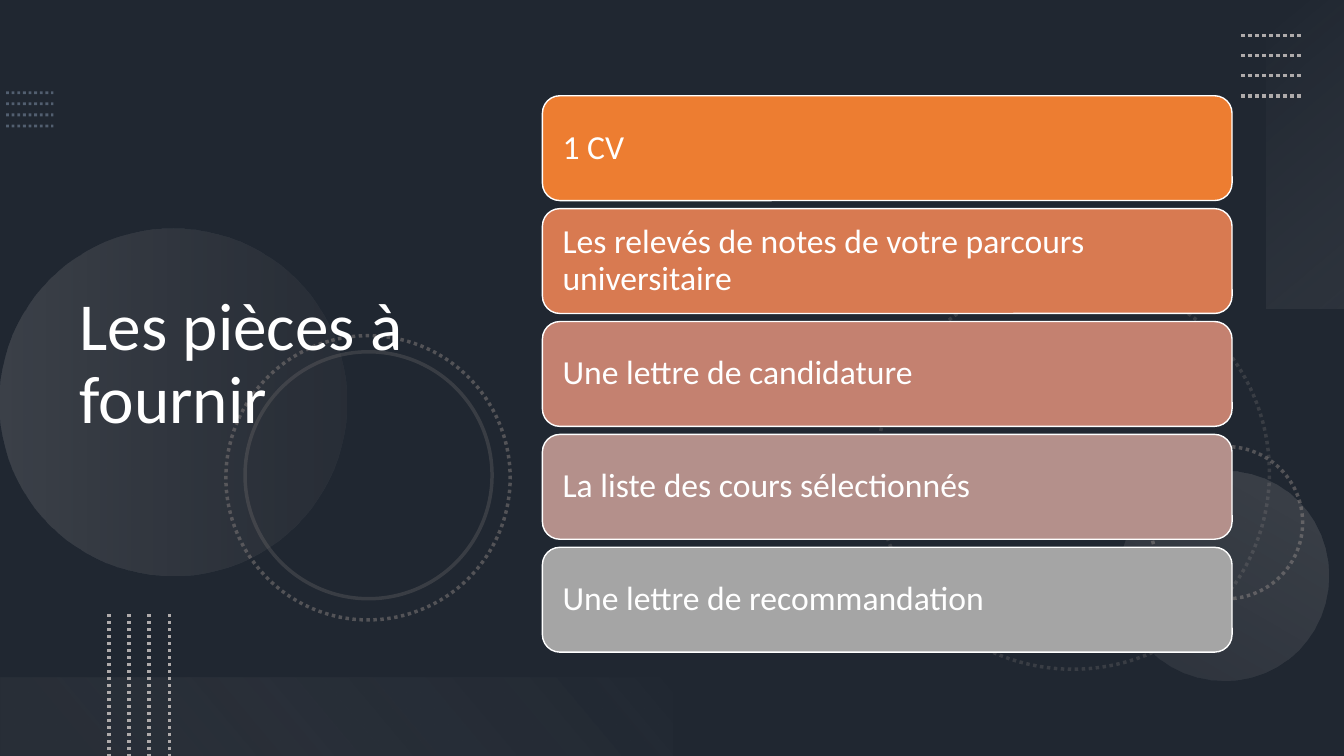
from lxml import etree
from pptx import Presentation
from pptx.dml.color import RGBColor
from pptx.enum.dml import MSO_LINE
from pptx.enum.shapes import MSO_CONNECTOR, MSO_SHAPE
from pptx.enum.text import MSO_ANCHOR, PP_ALIGN
from pptx.oxml.ns import qn
from pptx.util import Inches, Pt

RECTANGLE = MSO_SHAPE.RECTANGLE
ROUNDED = MSO_SHAPE.ROUNDED_RECTANGLE
OVAL = MSO_SHAPE.OVAL
STRAIGHT = MSO_CONNECTOR.STRAIGHT
DOTTED = MSO_LINE.ROUND_DOT
MIDDLE = MSO_ANCHOR.MIDDLE
LEFT = PP_ALIGN.LEFT

COLORS = {
    "background": "44546A",
    "overlay": "000000",
    "white": "FFFFFF",
    "blue": "8497B0",
    "gray": "767171",
    "silver": "AFABAB",
    "pale": "F5F5F5",
}
CARDS = [
    ("1 CV", "ED7D31"),
    ("Les relevés de notes de votre parcours universitaire", "D87A51"),
    ("Une lettre de candidature", "C48170"),
    ("La liste des cours sélectionnés", "B4908B"),
    ("Une lettre de recommandation", "A5A5A5"),
]


def rgb(name):
    return RGBColor.from_string(COLORS.get(name, name))


def set_opacity(element, *percents):
    for color, percent in zip(element.iter(qn("a:srgbClr")), percents):
        etree.SubElement(color, qn("a:alpha")).set("val", str(percent * 1000))


def set_line(line, color, width, dash=None):
    line.color.rgb = rgb(color)
    line.width = Pt(width)
    if dash:
        line.dash_style = dash


def add_shape(slide, kind, box, rotation=0):
    shape = slide.shapes.add_shape(kind, *map(Inches, box))
    shape.rotation = rotation
    shape.shadow.inherit = False
    shape.fill.background()
    shape.line.fill.background()
    return shape


def write_text(shape, text, *, size, color="white", font="Calibri", margin=0.1):
    frame = shape.text_frame
    frame.word_wrap = True
    frame.vertical_anchor = MIDDLE
    frame.margin_left = frame.margin_right = Inches(margin)
    paragraph = frame.paragraphs[0]
    paragraph.alignment = LEFT
    paragraph.line_spacing = 0.9
    run = paragraph.add_run()
    run.text = text
    run.font.size = Pt(size)
    run.font.name = font
    run.font.color.rgb = rgb(color)


def add_backdrop(slide, box):
    slide.background.fill.solid()
    slide.background.fill.fore_color.rgb = rgb("background")
    overlay = add_shape(slide, RECTANGLE, box)
    overlay.fill.solid()
    overlay.fill.fore_color.rgb = rgb("overlay")
    set_opacity(overlay._element.spPr, 53)


def add_dotted_lines(slide, box, color, width, vertical=False, opacity=100, count=4):
    left, top, box_width, box_height = box
    for index in range(count):
        share = index / (count - 1)
        if vertical:
            x = left + share * box_width
            ends = (x, top, x, top + box_height)
        else:
            y = top + share * box_height
            ends = (left, y, left + box_width, y)
        line = slide.shapes.add_connector(STRAIGHT, *map(Inches, ends))
        set_line(line.line, color, width, DOTTED)
        properties = line._element.spPr
        etree.SubElement(properties, qn("a:effectLst"))
        set_opacity(properties, opacity)


def add_ring(slide, box, opacity, rotation=75, dash=DOTTED):
    ring = add_shape(slide, OVAL, box, rotation)
    set_line(ring.line, "gray", 2.5, dash)
    set_opacity(ring._element.spPr, opacity)


def add_gradient(slide, kind, box, rotation, angle, stops):
    shape = add_shape(slide, kind, box, rotation)
    shape.fill.gradient()
    shape.fill.gradient_angle = 360 - angle
    for stop, (position, color, _) in zip(shape.fill.gradient_stops, stops):
        stop.position = position
        stop.color.rgb = rgb(color)
    set_opacity(shape._element.spPr, *(opacity for _, _, opacity in stops))


def add_circles(slide):
    add_ring(slide, (8.69, 2.74, 3.9, 3.9), 30)
    add_ring(slide, (11.41, 4.43, 1.51, 1.51), 60, rotation=270)
    add_gradient(slide, OVAL, (0, 2.27, 3.44, 3.44), 270, 90,
                 [(0, "silver", 20), (1, "gray", 10)])
    add_gradient(slide, OVAL, (11.1, 4.67, 2.08, 2.08), 210, 90,
                 [(0, "silver", 10), (1, "silver", 20)])
    add_ring(slide, (2.24, 3.33, 2.82, 2.82), 60)
    add_ring(slide, (2.43, 3.49, 2.45, 2.45), 30, dash=None)


def add_title(slide, box, text):
    title = slide.shapes.title
    title.left, title.top, title.width, title.height = map(Inches, box)
    write_text(title, text, size=48)
    title._element.getparent().append(title._element)


def add_cards(slide, box, cards, gap=0.08):
    left, top, width, height = box
    card_height = (height - gap * (len(cards) - 1)) / len(cards)
    for index, (text, color) in enumerate(cards):
        card_top = top + index * (card_height + gap)
        card = add_shape(slide, ROUNDED, (left, card_top, width, card_height))
        card.fill.solid()
        card.fill.fore_color.rgb = rgb(color)
        set_line(card.line, "white", 1)
        write_text(card, text, size=24, margin=0.15)


def build_documents_slide(presentation):
    slide = presentation.slides.add_slide(presentation.slide_layouts[5])
    add_backdrop(slide, (0, 0, 13.33, 7.5))
    add_dotted_lines(slide, (0.06, 0.92, 0.47, 0.33), "blue", 2, opacity=50)
    add_circles(slide)
    add_gradient(slide, RECTANGLE, (11.42, 1.14, 3.06, 0.78), 270, 140,
                 [(0, "pale", 0), (1, "silver", 10)])
    add_dotted_lines(slide, (12.31, 0.35, 0.6, 0.6), "silver", 2.5)
    add_gradient(slide, RECTANGLE, (0, 6.72, 6.67, 0.78), 180, 140,
                 [(0.1, "gray", 10), (1, "pale", 0)])
    add_dotted_lines(slide, (1.08, 6.09, 0.6, 1.41), "silver", 2.5, vertical=True)
    add_title(slide, (0.69, 0.54, 4.59, 6.17), "Les pièces à fournir")
    add_cards(slide, (5.38, 0.95, 6.84, 5.52), CARDS)


def main():
    presentation = Presentation()
    presentation.slide_width = Inches(13.33)
    presentation.slide_height = Inches(7.5)
    build_documents_slide(presentation)
    presentation.save("out.pptx")


if __name__ == "__main__":
    main()
